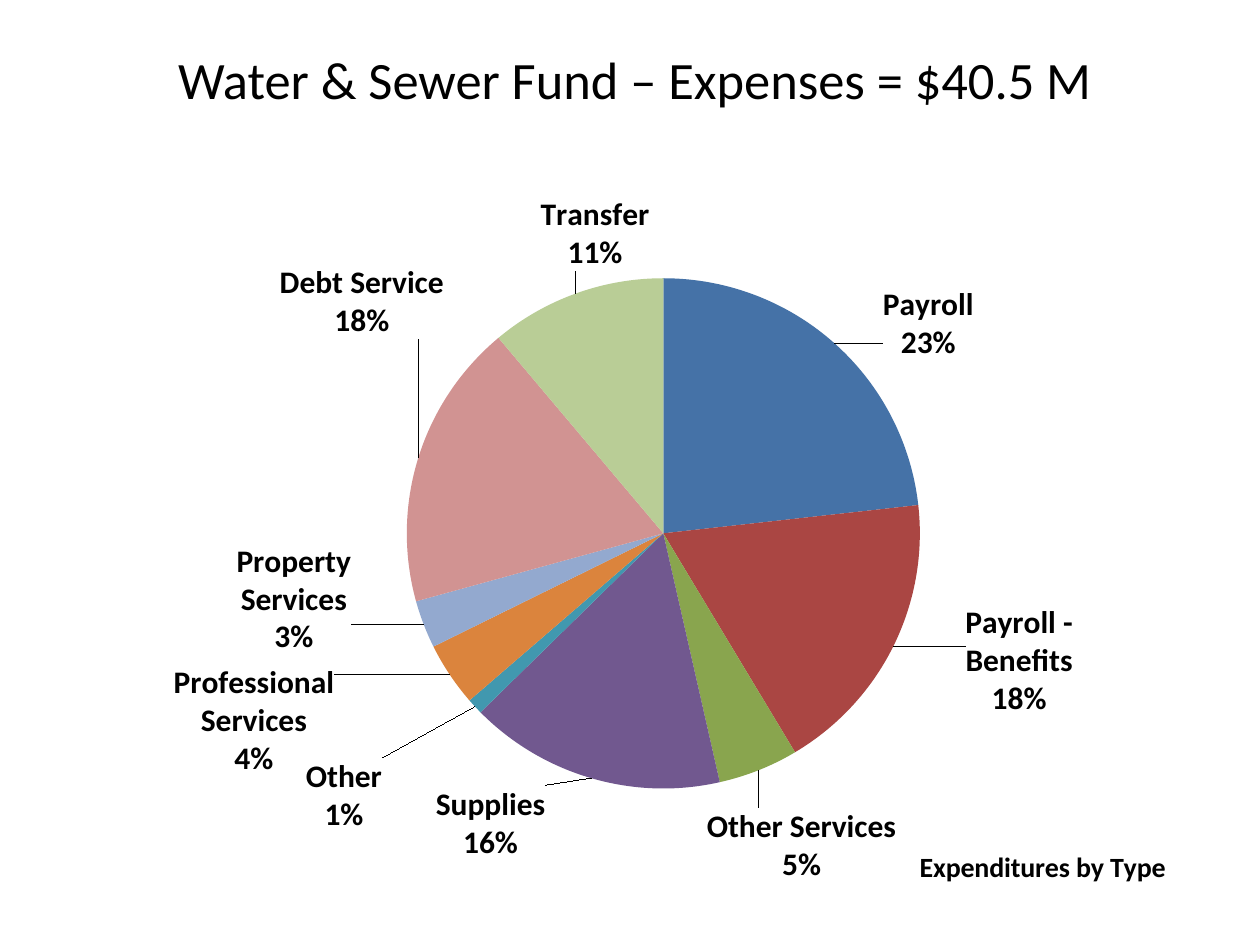
from lxml import etree
from pptx import Presentation
from pptx.chart.data import CategoryChartData
from pptx.dml.color import RGBColor
from pptx.enum.chart import XL_CHART_TYPE as ChartType, XL_LABEL_POSITION as LabelPos
from pptx.enum.text import MSO_ANCHOR as Anchor, PP_ALIGN as Align
from pptx.oxml.ns import qn
from pptx.util import Inches, Pt

BLACK = RGBColor(0, 0, 0)
BLUE = RGBColor(0x45, 0x72, 0xA7)
RED = RGBColor(0xAA, 0x46, 0x43)
GREEN = RGBColor(0x89, 0xA5, 0x4E)
PURPLE = RGBColor(0x71, 0x58, 0x8F)
TEAL = RGBColor(0x41, 0x98, 0xAF)
ORANGE = RGBColor(0xDB, 0x84, 0x3D)
LIGHT_BLUE = RGBColor(0x93, 0xA9, 0xCF)
PINK = RGBColor(0xD1, 0x93, 0x92)
LIGHT_GREEN = RGBColor(0xB9, 0xCD, 0x96)

EXPENSES = [
    ("Payroll", 23, BLUE, (0.04, 0.03)),
    ("Payroll - Benefits", 18, RED, (0.06, -0.06)),
    ("Other Services", 5, GREEN, (-0.05, 0.04)),
    ("Supplies", 16, PURPLE, (-0.04, 0)),
    ("Other", 1, TEAL, (-0.08, 0.06)),
    ("Professional Services", 4, ORANGE, (-0.1, -0.02)),
    ("Property Services", 3, LIGHT_BLUE, (-0.06, -0.11)),
    ("Debt Service", 18, PINK, (0.03, -0.15)),
    ("Transfer", 11, LIGHT_GREEN, (0.07, -0.02)),
]


def make_layout(**values):
    layout = etree.Element(qn("c:layout"))
    manual = etree.SubElement(layout, qn("c:manualLayout"))
    for tag, val in values.items():
        etree.SubElement(manual, qn(f"c:{tag}")).set("val", str(val))
    return layout


def replace_layout(parent, index, layout):
    for old in parent.findall(qn("c:layout")):
        parent.remove(old)
    parent.insert(index, layout)


class Deck:
    font = "Calibri"

    def __init__(self):
        self.prs = Presentation()
        self.prs.slide_width, self.prs.slide_height = Inches(10), Inches(7.5)
        self.s = self.prs.slides.add_slide(self.prs.slide_layouts[5])

    def style(self, font, size, bold):
        font.name, font.size, font.bold = self.font, Pt(size), bold
        font.color.rgb = BLACK

    def title(self, text, x, y, w, h, size):
        sp = self.s.shapes.title
        sp.left, sp.top, sp.width, sp.height = (Inches(v) for v in (x, y, w, h))
        tf = sp.text_frame
        tf.word_wrap, tf.vertical_anchor = True, Anchor.MIDDLE
        p = tf.paragraphs[0]
        p.alignment = Align.CENTER
        r = p.add_run()
        r.text = text
        self.style(r.font, size, False)

    def pie(self, rows, caption, x, y, w, h):
        data = CategoryChartData(number_format="0")
        data.categories = [row[0] for row in rows]
        data.add_series("Series 1", [row[1] for row in rows])
        box = (Inches(v) for v in (x, y, w, h))
        chart = self.s.shapes.add_chart(ChartType.PIE, *box, data).chart
        self.style(chart.font, 18, False)
        chart.has_legend = False
        self.caption(chart, caption)
        plot = chart.plots[0]
        plot.vary_by_categories = True
        area = chart.element.find(".//" + qn("c:plotArea"))
        replace_layout(area, 0, make_layout(
            layoutTarget="inner", xMode="edge", yMode="edge",
            x=0.29, y=0.21, w=0.48, h=0.66))
        series = plot.series[0]
        self.series_labels(series)
        for i, (_, _, color, offset) in enumerate(rows):
            point = series.points[i]
            point.format.fill.solid()
            point.format.fill.fore_color.rgb = color
            self.point_label(point.data_label, offset)

    def caption(self, chart, text):
        chart.has_title = True
        title = chart.chart_title
        r = title.text_frame.paragraphs[0].add_run()
        r.text = text
        self.style(r.font, 16, True)
        title.include_in_layout = False
        replace_layout(title._element, 1, make_layout(
            xMode="edge", yMode="edge", x=0.76, y=0.94))

    def series_labels(self, series):
        labels = series.data_labels
        self.style(labels.font, 18, True)
        labels.number_format, labels.number_format_is_linked = "0%", False
        labels.show_value = False
        labels.show_category_name = labels.show_percentage = True
        labels.position = LabelPos.OUTSIDE_END
        element = labels._element
        leader = element.find(qn("c:showLeaderLines"))
        if leader is None:
            leader = etree.SubElement(element, qn("c:showLeaderLines"))
        leader.set("val", "1")

    def point_label(self, label, offset):
        self.style(label.font, 18, True)
        label.position = LabelPos.OUTSIDE_END
        element = label._dLbl
        replace_layout(element, 1, make_layout(x=offset[0], y=offset[1]))
        for tag, val in (("showVal", "0"), ("showCatName", "1"), ("showPercent", "1")):
            element.find(qn(f"c:{tag}")).set("val", val)
        etree.SubElement(element, qn("c:separator")).text = "\n"

    def save(self):
        self.prs.save("out.pptx")


def main():
    deck = Deck()
    deck.title("Water & Sewer Fund – Expenses = $40.5 M", 0.75, 0.25, 8.58, 0.75, 30)
    deck.pie(EXPENSES, "Expenditures by Type", 0.67, 0.92, 8.67, 6.17)
    deck.save()


if __name__ == "__main__":
    main()
